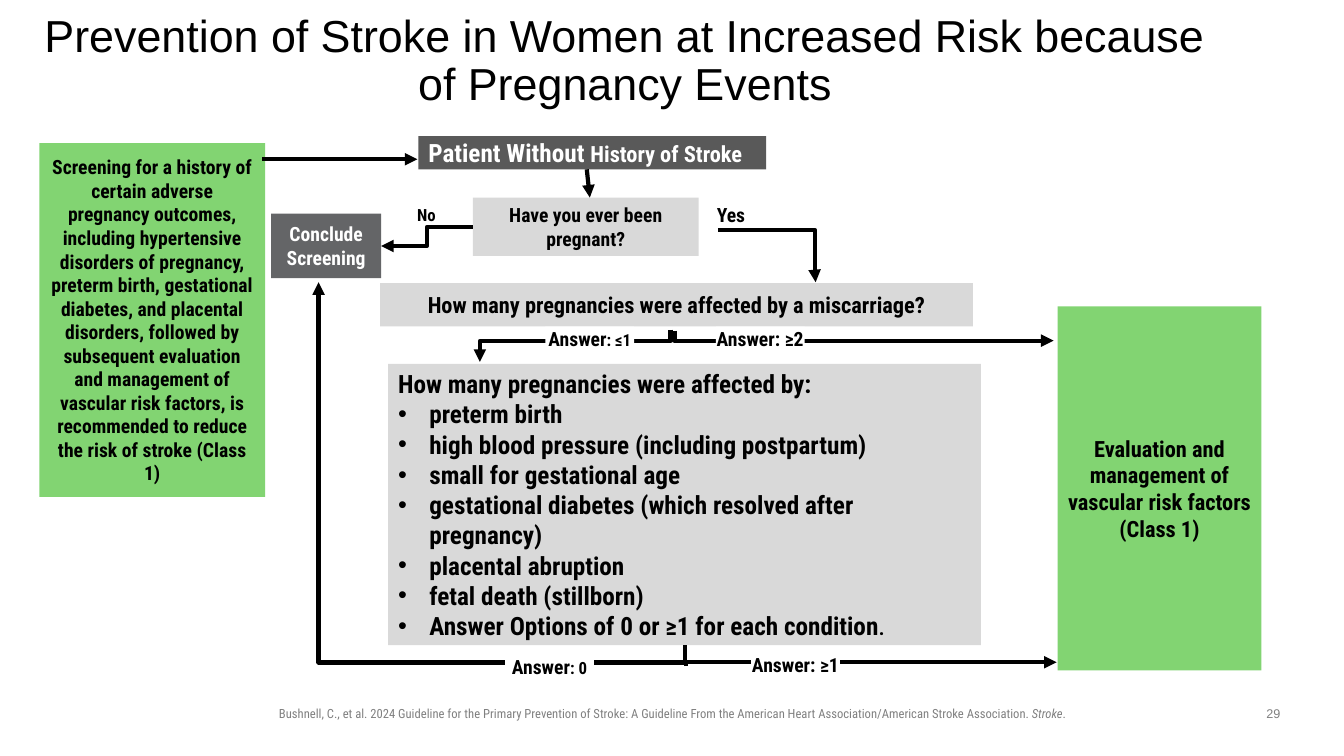
from dataclasses import dataclass

import pptx
import pptx.dml.color
import pptx.enum.shapes
import pptx.enum.text
import pptx.oxml
import pptx.oxml.ns
import pptx.util

Inches = pptx.util.Inches
ALIGN = pptx.enum.text.PP_ALIGN
ANCHOR = pptx.enum.text.MSO_ANCHOR
FIT = pptx.enum.text.MSO_AUTO_SIZE


@dataclass(frozen=True)
class Theme:
    black: str = "000000"
    white: str = "FFFFFF"
    green: str = "82D472"
    pale: str = "D9D9D9"
    dark: str = "595959"
    slate: str = "646567"
    muted: str = "808080"
    heading_font: str = "Arial"
    body_font: str = "Roboto Condensed"
    title: int = 32
    large: int = 18
    medium: int = 16
    small: int = 14
    tiny: int = 12
    footer: int = 9
    line: int = 3


T = Theme()
SLIDE_SIZE = (13.33, 7.5)
TITLE = "Prevention of Stroke in Women at Increased Risk because of Pregnancy Events"
TITLE_AREA = (0.32, 0.14, 11.76, 0.95)
CONDITIONS = [
    "preterm birth",
    "high blood pressure (including postpartum)",
    "small for gestational age",
    "gestational diabetes (which resolved after pregnancy)",
    "placental abruption",
    "fetal death (stillborn)",
]
SCREENING = (
    "Screening for a history of certain adverse pregnancy outcomes, including "
    "hypertensive disorders of pregnancy, preterm birth, gestational diabetes, and "
    "placental disorders, followed by subsequent evaluation and management of vascular "
    "risk factors, is recommended to reduce the risk of stroke (Class 1)"
)
STEPS = {
    "screening": ((0.39, 1.42, 2.24, 3.51), T.green, T.black, ALIGN.CENTER,
                  [[(SCREENING, T.small)]]),
    "patient": ((4.15, 1.35, 3.45, 0.33), T.dark, T.white, ALIGN.LEFT,
                [[("Patient Without ", T.large), ("History of Stroke", T.medium)]]),
    "pregnant": ((4.69, 1.96, 2.24, 0.58), T.pale, T.black, ALIGN.CENTER,
                 [[("Have you ever been pregnant?", T.small)]]),
    "conclude": ((2.69, 2.12, 1.09, 0.64), T.slate, T.white, ALIGN.CENTER,
                 [[("Conclude Screening", T.small)]]),
    "miscarriage": ((3.77, 2.81, 5.88, 0.43), T.pale, T.black, ALIGN.CENTER,
                    [[("How many pregnancies were affected by a miscarriage?", T.medium)]]),
    "evaluation": ((10.49, 3.04, 2.02, 3.61), T.green, T.black, ALIGN.CENTER,
                   [[("Evaluation and management of vascular risk factors", T.medium)],
                    [("(Class 1)", T.medium)]]),
    "conditions": ((3.85, 3.61, 5.88, 2.79), T.pale, T.black, ALIGN.LEFT,
                   [[("How many pregnancies were affected by:", T.large)]]
                   + [[(condition, T.large)] for condition in CONDITIONS]
                   + [[("Answer Options of 0 or ≥1 for each condition", T.large),
                       (".", T.small)]]),
}
ANSWERS = [
    ((4.03, 2.03, 0.4, 0.2), [("No", T.tiny)]),
    ((7.05, 2.01, 0.4, 0.24), [("Yes", T.small)]),
    ((5.41, 3.24, 0.88, 0.24), [("Answer", T.small), (": ≤1", T.tiny)]),
    ((7.1, 3.24, 0.88, 0.24), [("Answer: ≥2", T.small)]),
    ((7.45, 6.48, 0.88, 0.24), [("Answer: ≥1", T.small)]),
    ((5.01, 6.5, 0.88, 0.24), [("Answer", T.small), (": 0", T.tiny)]),
]
STRAIGHT_ARROWS = [((5.82, 1.68), (5.85, 1.96)), ((2.6, 1.58), (4.14, 1.58))]
SIDEWAYS_ARROW = ((7.12, 2.28), (8.09, 2.8), 0.99)
UPRIGHT_ARROWS = [
    ((6.65, 3.27), (4.76, 3.59), 0.35),
    ((6.69, 3.28), (10.45, 3.38), None),
    ((6.79, 6.4), (10.48, 6.57), None),
    ((6.8, 6.61), (3.16, 2.8), 0.01),
]
CITATION = [
    ("Bushnell, C., et al. 2024 Guideline for the Primary Prevention of Stroke: "
     "A Guideline From the American Heart Association/American Stroke Association. ", False),
    ("Stroke", True),
    (".", False),
]
CITATION_AREA = (2.36, 6.95, 8.62, 0.25)
PAGE = "29"
PAGE_AREA = (12.42, 6.95, 0.42, 0.26)


def rgb(color):
    return pptx.dml.color.RGBColor.from_string(color)


def inches(values):
    return [Inches(value) for value in values]


def add_run(paragraph, text, size, color, font=T.body_font, bold=False, italic=False):
    run = paragraph.add_run()
    run.text = text
    run.font.size = pptx.util.Pt(size)
    run.font.name = font
    run.font.bold = bold
    run.font.italic = italic
    run.font.color.rgb = rgb(color)


def clear_margins(frame):
    frame.margin_left = frame.margin_right = frame.margin_top = frame.margin_bottom = 0


def add_bullet(paragraph):
    properties = paragraph._p.get_or_add_pPr()
    properties.set("marL", str(Inches(0.31)))
    properties.set("indent", str(-Inches(0.31)))
    namespace = pptx.oxml.ns.nsdecls("a")
    properties.append(pptx.oxml.parse_xml(f'<a:buFont {namespace} typeface="Arial"/>'))
    properties.append(pptx.oxml.parse_xml(f'<a:buChar {namespace} char="•"/>'))


def add_box(slide, area, fill, color, align, paragraphs):
    box = slide.shapes.add_shape(pptx.enum.shapes.MSO_SHAPE.RECTANGLE, *inches(area))
    box.shadow.inherit = False
    box.fill.solid()
    box.fill.fore_color.rgb = rgb(fill)
    box.line.fill.background()
    frame = box.text_frame
    frame.word_wrap = True
    frame.vertical_anchor = ANCHOR.MIDDLE
    for index, runs in enumerate(paragraphs):
        paragraph = frame.paragraphs[0] if index == 0 else frame.add_paragraph()
        paragraph.alignment = align
        if align == ALIGN.LEFT and index:
            add_bullet(paragraph)
        for text, size in runs:
            add_run(paragraph, text, size, color, bold=True)
    return box


def add_arrow(slide, kind, start, end):
    arrow = slide.shapes.add_connector(kind, *inches(start + end))
    arrow.line.color.rgb = rgb(T.black)
    arrow.line.width = pptx.util.Pt(T.line)
    namespace = pptx.oxml.ns.nsdecls("a")
    arrow.line._get_or_add_ln().append(
        pptx.oxml.parse_xml(f'<a:tailEnd {namespace} type="triangle"/>'))
    arrow._element.spPr.append(pptx.oxml.parse_xml(f"<a:effectLst {namespace}/>"))
    return arrow


def set_bend(arrow, share):
    geometry = arrow._element.spPr.find(pptx.oxml.ns.qn("a:prstGeom"))
    if share is None:
        geometry.set("prst", "bentConnector2")
        return
    guides = geometry.get_or_add_avLst()
    guides.append(pptx.oxml.parse_xml(
        f'<a:gd {pptx.oxml.ns.nsdecls("a")} name="adj1" fmla="val {round(share * 100000)}"/>'))


def add_upright_arrow(slide, start, end, share):
    (x1, y1), (x2, y2) = start, end
    middle_x, middle_y = (x1 + x2) / 2, (y1 + y2) / 2
    reach, rise = abs(y2 - y1) / 2, abs(x2 - x1) / 2
    arrow = add_arrow(slide, pptx.enum.shapes.MSO_CONNECTOR.ELBOW,
                      (middle_x - reach, middle_y - rise), (middle_x + reach, middle_y + rise))
    turn = arrow._element.spPr.find(pptx.oxml.ns.qn("a:xfrm"))
    turn.set("rot", str((90 if y2 > y1 else 270) * 60000))
    if (x2 > x1) == (y2 > y1):
        turn.set("flipV", "1")
    set_bend(arrow, share)


def add_footer(slide, area, runs, font):
    box = slide.shapes.add_textbox(*inches(area))
    box.text_frame.word_wrap = True
    paragraph = box.text_frame.paragraphs[0]
    paragraph.alignment = ALIGN.CENTER
    for text, italic in runs:
        add_run(paragraph, text, T.footer, T.muted, font, italic=italic)


def main():
    deck = pptx.Presentation()
    deck.slide_width, deck.slide_height = inches(SLIDE_SIZE)
    slide = deck.slides.add_slide(deck.slide_layouts[5])
    elbow = pptx.enum.shapes.MSO_CONNECTOR.ELBOW

    title = slide.shapes.title
    title.left, title.top, title.width, title.height = inches(TITLE_AREA)
    heading = title.text_frame
    heading.word_wrap = True
    heading.auto_size = FIT.NONE
    heading.vertical_anchor = ANCHOR.MIDDLE
    clear_margins(heading)
    heading.paragraphs[0].alignment = ALIGN.CENTER
    heading.paragraphs[0].line_spacing = 0.9
    add_run(heading.paragraphs[0], TITLE, T.title, T.black, T.heading_font)

    steps = {name: add_box(slide, *step) for name, step in STEPS.items()}

    for start, end in STRAIGHT_ARROWS:
        add_arrow(slide, pptx.enum.shapes.MSO_CONNECTOR.STRAIGHT, start, end)
    start, end, share = SIDEWAYS_ARROW
    set_bend(add_arrow(slide, elbow, start, end), share)
    no_arrow = add_arrow(slide, elbow, (4.69, 2.25), (3.78, 2.44))
    no_arrow.begin_connect(steps["pregnant"], 1)
    no_arrow.end_connect(steps["conclude"], 3)
    for route in UPRIGHT_ARROWS:
        add_upright_arrow(slide, *route)

    for area, runs in ANSWERS:
        answer = add_box(slide, area, T.white, T.black, ALIGN.CENTER, [runs]).text_frame
        answer.vertical_anchor = ANCHOR.TOP
        answer.auto_size = FIT.SHAPE_TO_FIT_TEXT
        clear_margins(answer)

    add_footer(slide, CITATION_AREA, CITATION, T.body_font)
    add_footer(slide, PAGE_AREA, [(PAGE, False)], T.heading_font)
    deck.save("out.pptx")


if __name__ == "__main__":
    main()
